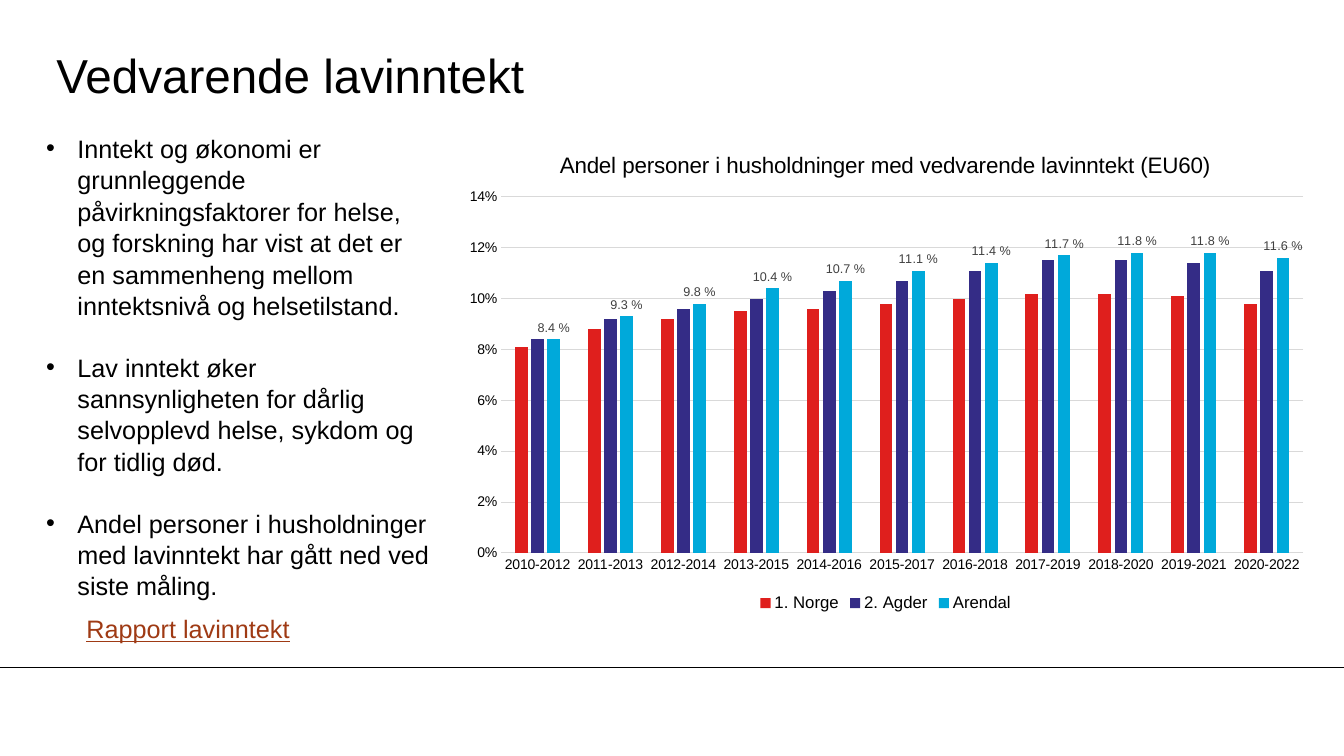
from lxml import etree
from pptx import Presentation
from pptx import util as u
from pptx.chart import data as chart_data
from pptx.dml import color
from pptx.enum import chart as charts, shapes, text
from pptx.oxml import ns, parse_xml

WIDTH, HEIGHT = 13.33, 7.5
FONT = "Arial"
BLACK, GRID, LINK, LABEL = "000000", "D9D9D9", "9F3A14", "404040"
POINTS = [
    "Inntekt og økonomi er grunnleggende påvirkningsfaktorer for helse, og forskning har vist at det er en sammenheng mellom inntektsnivå og helsetilstand.",
    "Lav inntekt øker sannsynligheten for dårlig selvopplevd helse, sykdom og for tidlig død.",
    "Andel personer i husholdninger med lavinntekt har gått ned ved siste måling.",
]
CHART_TITLE = "Andel personer i husholdninger med vedvarende lavinntekt (EU60)"
PERIODS = [f"{year}-{year + 2}" for year in range(2010, 2021)]
SERIES = [
    ("1. Norge", "DF1F1D", [8.1, 8.8, 9.2, 9.5, 9.6, 9.8, 10, 10.2, 10.2, 10.1, 9.8]),
    ("2. Agder", "342C86", [8.4, 9.2, 9.6, 10, 10.3, 10.7, 11.1, 11.5, 11.5, 11.4, 11.1]),
    ("Arendal", "00A9DA", [8.4, 9.3, 9.8, 10.4, 10.7, 11.1, 11.4, 11.7, 11.8, 11.8, 11.6]),
]


def area(left, top, width, height):
    return (u.Inches(left * WIDTH), u.Inches(top * HEIGHT),
            u.Inches(width * WIDTH), u.Inches(height * HEIGHT))


def paint(target, value):
    target.rgb = color.RGBColor.from_string(value)


def set_font(font, size, value=BLACK):
    font.name, font.size, font.bold = FONT, u.Pt(size), False
    paint(font.color, value)


def set_line(line, value):
    line.width = u.Pt(0.75)
    line.fill.solid()
    paint(line.fill.fore_color, value)


def add_title(slide, words):
    title = slide.shapes.title
    title.left, title.top, title.width, title.height = area(0.042, 0.048, 0.833, 0.1)
    frame = title.text_frame
    frame.text = words
    frame.margin_left = frame.margin_right = frame.margin_top = frame.margin_bottom = 0
    frame.vertical_anchor = text.MSO_ANCHOR.MIDDLE
    frame.paragraphs[0].alignment = text.PP_ALIGN.LEFT
    set_font(frame.paragraphs[0].runs[0].font, 34)


def add_text(slide, place, lines, value=BLACK, bullet=False, underline=False):
    frame = slide.shapes.add_textbox(*area(*place)).text_frame
    frame.word_wrap = True
    frame.text = "\n".join(lines)
    for index, para in enumerate(frame.paragraphs):
        if bullet:
            properties = para._p.get_or_add_pPr()
            properties.set("marL", str(u.Inches(0.31)))
            properties.set("indent", str(-u.Inches(0.31)))
            etree.SubElement(properties, ns.qn("a:buFont")).set("typeface", FONT)
            etree.SubElement(properties, ns.qn("a:buChar")).set("char", "•")
            para.line_spacing = 1.04
            para.space_before = u.Pt(21.6 if index else 0)
        for span in para.runs:
            set_font(span.font, 18, value)
            span.font.underline = underline


def add_rule(slide, share):
    top = u.Inches(share * HEIGHT)
    rule = slide.shapes.add_connector(
        shapes.MSO_CONNECTOR.STRAIGHT, 0, top, u.Inches(WIDTH), top)
    set_line(rule.line, BLACK)
    etree.SubElement(rule._element.spPr, ns.qn("a:effectLst"))


def set_layout(parent, after, inner=False, **shares):
    for old in parent.findall(ns.qn("c:layout")):
        parent.remove(old)
    target = '<c:layoutTarget val="inner"/>' if inner else ""
    modes = "".join(f'<c:{axis}Mode val="edge"/>' for axis in "xy")
    sizes = "".join(f'<c:{key} val="{share}"/>' for key, share in shares.items())
    layout = parse_xml(f'<c:layout {ns.nsdecls("c")}><c:manualLayout>'
                       f'{target}{modes}{sizes}</c:manualLayout></c:layout>')
    if after is None:
        parent.insert(0, layout)
    else:
        after.addnext(layout)


def style_axes(chart):
    periods, shares = chart.category_axis, chart.value_axis
    for axis in (periods, shares):
        axis.major_tick_mark = axis.minor_tick_mark = charts.XL_TICK_MARK.NONE
        set_font(axis.tick_labels.font, 10)
    set_line(periods.format.line, GRID)
    shares.minimum_scale, shares.maximum_scale, shares.major_unit = 0, 0.14, 0.02
    shares.tick_labels.number_format = "0%"
    shares.tick_labels.number_format_is_linked = False
    shares.format.line.fill.background()
    set_line(shares.major_gridlines.format.line, GRID)


def add_labels(series):
    labels = series.data_labels
    labels.show_value = True
    labels.number_format = "0.0\\ %"
    labels.number_format_is_linked = False
    labels.position = charts.XL_LABEL_POSITION.OUTSIDE_END
    set_font(labels.font, 9, LABEL)


def add_income_chart(slide, place):
    source = chart_data.CategoryChartData(number_format="0.0%")
    source.categories = PERIODS
    for name, _, percents in SERIES:
        source.add_series(name, [round(percent / 100, 3) for percent in percents])
    chart = slide.shapes.add_chart(
        charts.XL_CHART_TYPE.COLUMN_CLUSTERED, *area(*place), source).chart
    set_font(chart.font, 10)
    frame = chart.chart_title.text_frame
    frame.text = CHART_TITLE
    set_font(frame.paragraphs[0].runs[0].font, 16)
    chart.chart_title.include_in_layout = False
    chart.has_legend = True
    chart.legend.position = charts.XL_LEGEND_POSITION.BOTTOM
    chart.legend.include_in_layout = False
    set_font(chart.legend.font, 12)
    style_axes(chart)
    plot = chart.plots[0]
    plot.gap_width, plot.overlap, plot.vary_by_categories = 219, -27, False
    for series, (_, value, _) in zip(plot.series, SERIES):
        series.format.fill.solid()
        paint(series.format.fill.fore_color, value)
    add_labels(plot.series[-1])
    heading = chart.chart_title._element
    set_layout(heading, heading.find(ns.qn("c:tx")), x=0.12, y=0.04)
    plot_area = chart._chartSpace.chart.plotArea
    set_layout(plot_area, None, inner=True, x=0.057, y=0.143, w=0.924, h=0.728)


def main():
    deck = Presentation()
    deck.slide_width, deck.slide_height = u.Inches(WIDTH), u.Inches(HEIGHT)
    page = deck.slides.add_slide(deck.slide_layouts[5])
    add_rule(page, 0.883)
    add_title(page, "Vedvarende lavinntekt")
    add_text(page, (0.027, 0.168, 0.302, 0.619), POINTS, bullet=True)
    add_text(page, (0.057, 0.805, 0.199, 0.053), ["Rapport lavinntekt"], LINK, underline=True)
    add_income_chart(page, (0.336, 0.168, 0.646, 0.647))
    deck.save("out.pptx")


if __name__ == "__main__":
    main()
